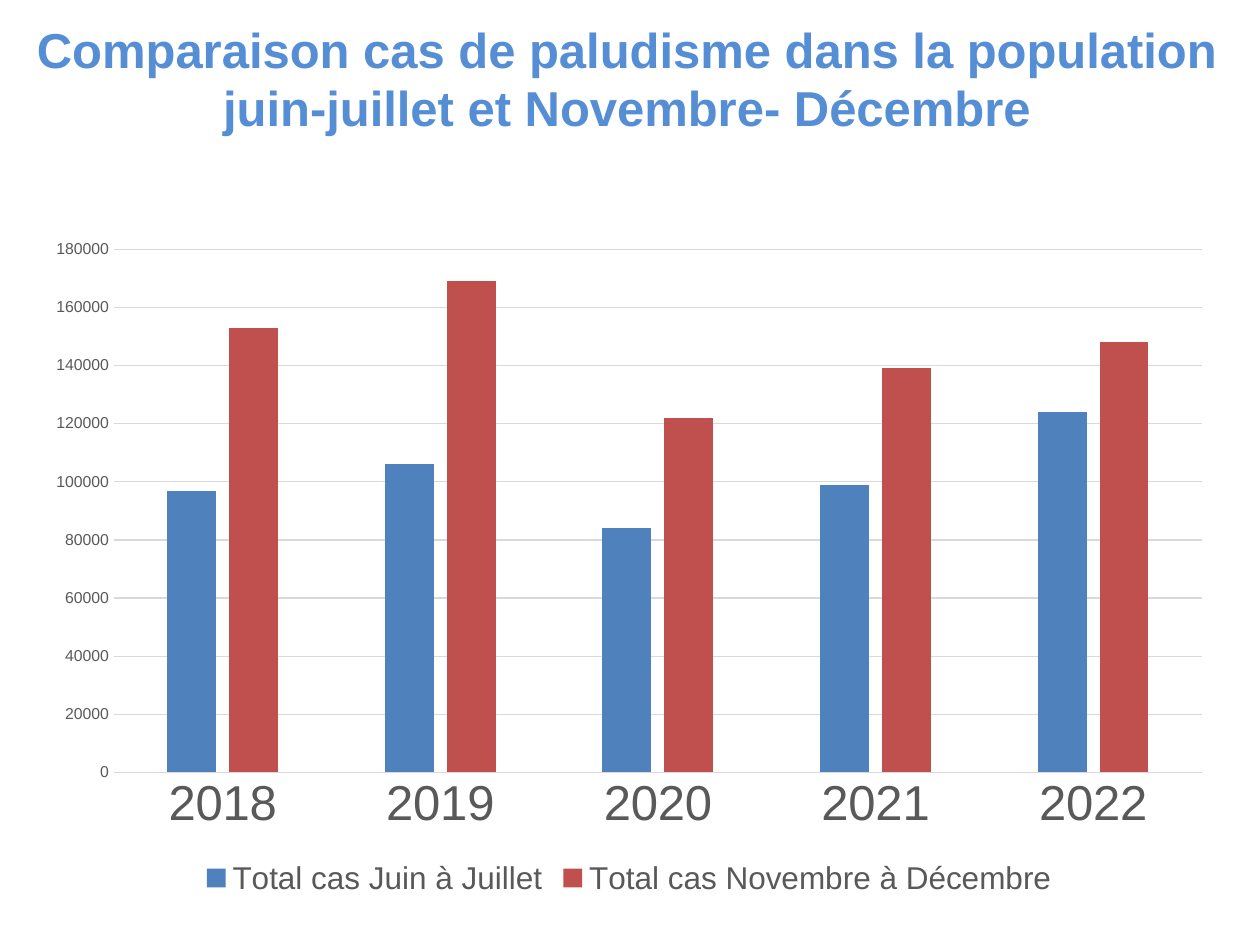
from dataclasses import dataclass

import pptx
import pptx.chart.data
import pptx.dml.color
import pptx.enum.chart
import pptx.enum.text
import pptx.util

Pt = pptx.util.Pt
RGB = pptx.dml.color.RGBColor


@dataclass(frozen=True)
class Theme:
    font: str = "Arial"
    title: RGB = RGB(0x55, 0x8E, 0xD5)
    label: RGB = RGB(0x59, 0x59, 0x59)
    grid: RGB = RGB(0xD9, 0xD9, 0xD9)
    title_size: int = 28
    year_size: int = 28
    legend_size: int = 18
    value_size: int = 9
    line_width: float = 0.75


@dataclass(frozen=True)
class Period:
    name: str
    cases: tuple[int, ...]
    color: RGB


THEME = Theme()
TITLE = ("Comparaison cas de paludisme dans la population "
         "juin-juillet et Novembre- Décembre")
YEARS = ("2018", "2019", "2020", "2021", "2022")
PERIODS = (
    Period("Total cas Juin à Juillet",
           (97000, 106000, 84000, 99000, 124000), RGB(0x4F, 0x81, 0xBD)),
    Period("Total cas Novembre à Décembre",
           (153000, 169000, 122000, 139000, 148000), RGB(0xC0, 0x50, 0x4D)),
)


def style_font(font, size: float, color: RGB, bold: bool = False) -> None:
    font.name = THEME.font
    font.size = Pt(size)
    font.bold = bold
    font.color.rgb = color


def style_line(line) -> None:
    line.color.rgb = THEME.grid
    line.width = Pt(THEME.line_width)


def add_title(slide) -> None:
    heading = slide.shapes.add_textbox(Pt(6.5), Pt(5), Pt(703.5), Pt(79))
    frame = heading.text_frame
    frame.word_wrap = True
    frame.vertical_anchor = pptx.enum.text.MSO_ANCHOR.MIDDLE
    frame.text = TITLE
    paragraph = frame.paragraphs[0]
    paragraph.alignment = pptx.enum.text.PP_ALIGN.CENTER
    style_font(paragraph.runs[0].font, THEME.title_size, THEME.title, bold=True)


def add_case_chart(slide) -> None:
    case_data = pptx.chart.data.CategoryChartData()
    case_data.categories = YEARS
    for period in PERIODS:
        case_data.add_series(period.name, period.cases)
    chart = slide.shapes.add_chart(
        pptx.enum.chart.XL_CHART_TYPE.COLUMN_CLUSTERED,
        Pt(18.5), Pt(129.5), Pt(682), Pt(386), case_data).chart
    chart.has_title = False
    chart.font.name = THEME.font

    # Columns
    columns = chart.plots[0]
    columns.gap_width = 219
    columns.overlap = -27
    columns.vary_by_categories = False
    for series, period in zip(columns.series, PERIODS):
        series.format.fill.solid()
        series.format.fill.fore_color.rgb = period.color
        series.invert_if_negative = False

    # Axes
    years, cases = chart.category_axis, chart.value_axis
    for axis, size in ((years, THEME.year_size), (cases, THEME.value_size)):
        axis.major_tick_mark = pptx.enum.chart.XL_TICK_MARK.NONE
        axis.minor_tick_mark = pptx.enum.chart.XL_TICK_MARK.NONE
        style_font(axis.tick_labels.font, size, THEME.label)
    style_line(years.format.line)
    cases.format.line.fill.background()
    cases.minimum_scale, cases.maximum_scale = 0, 180000
    cases.major_unit = 20000
    cases.has_major_gridlines = True
    style_line(cases.major_gridlines.format.line)

    # Legend
    chart.has_legend = True
    chart.legend.position = pptx.enum.chart.XL_LEGEND_POSITION.BOTTOM
    chart.legend.include_in_layout = False
    style_font(chart.legend.font, THEME.legend_size, THEME.label)


def main() -> None:
    deck = pptx.Presentation()
    deck.slide_width, deck.slide_height = Pt(720), Pt(540)
    slide = deck.slides.add_slide(deck.slide_layouts[6])
    add_title(slide)
    add_case_chart(slide)
    deck.save("out.pptx")


if __name__ == "__main__":
    main()
